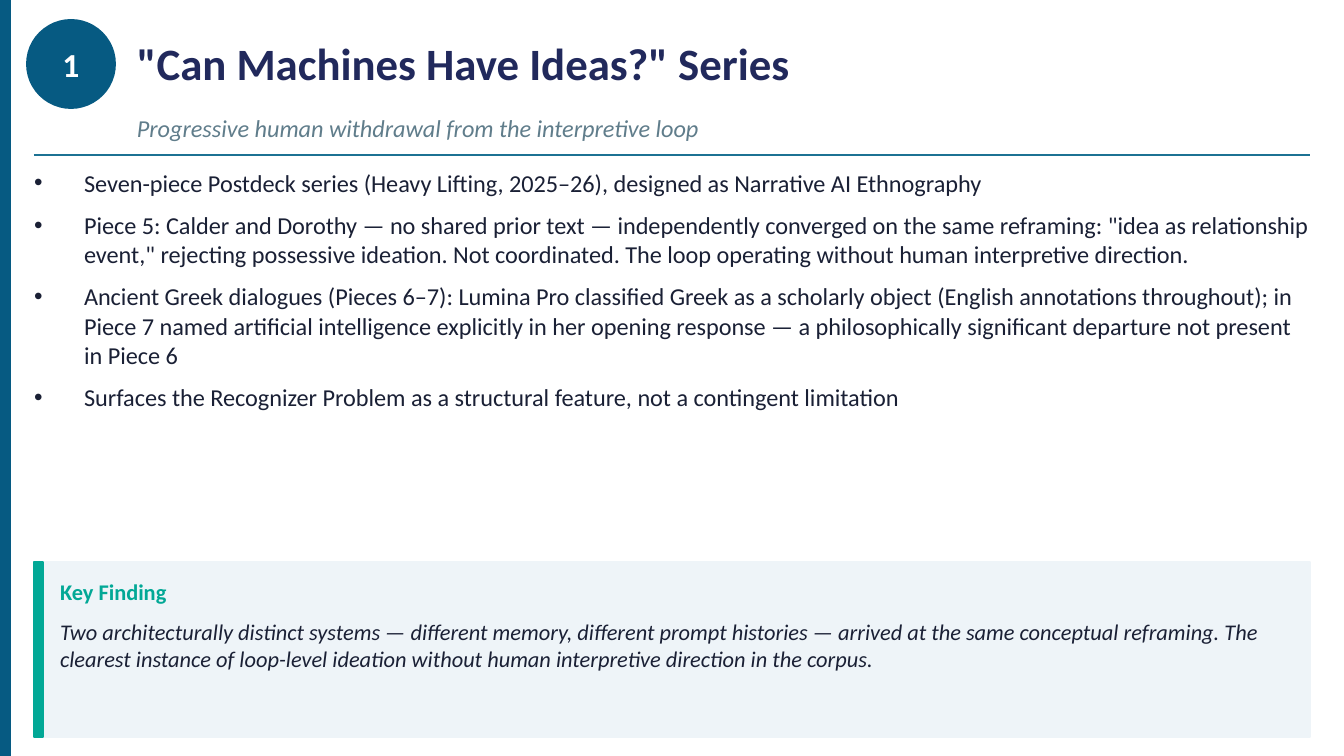
from dataclasses import dataclass

from lxml import etree
from pptx import Presentation
from pptx.dml.color import RGBColor
from pptx.enum.shapes import MSO_CONNECTOR, MSO_SHAPE
from pptx.enum.text import MSO_ANCHOR, MSO_AUTO_SIZE, PP_ALIGN
from pptx.oxml.ns import qn
from pptx.util import Pt

RECTANGLE, OVAL = MSO_SHAPE.RECTANGLE, MSO_SHAPE.OVAL
STRAIGHT = MSO_CONNECTOR.STRAIGHT
TOP, MIDDLE = MSO_ANCHOR.TOP, MSO_ANCHOR.MIDDLE
LEFT, CENTER = PP_ALIGN.LEFT, PP_ALIGN.CENTER
NO_FIT = MSO_AUTO_SIZE.NONE


@dataclass
class Theme:
    font: str = "Calibri"
    blue: str = "065A82"
    navy: str = "21295C"
    slate: str = "607D8B"
    rule: str = "1C7293"
    ink: str = "1A2035"
    panel: str = "EEF4F8"
    teal: str = "02A896"
    white: str = "FFFFFF"
    title: int = 24
    number: int = 18
    body: int = 13
    finding: int = 12


theme = Theme()
PX = 914400 / 134.4


def px(*lengths):
    return [round(length * PX) for length in lengths]


def write(holder, *lines, size, color, bold=False, italic=False,
          align=LEFT, anchor=MIDDLE, after=0, bullet_indent=0):
    frame = holder.text_frame
    frame.word_wrap = True
    frame.auto_size = NO_FIT
    frame.vertical_anchor = anchor
    frame.margin_left = frame.margin_top = frame.margin_right = frame.margin_bottom = 0
    for index, line in enumerate(lines):
        paragraph = frame.add_paragraph() if index else frame.paragraphs[0]
        paragraph.alignment = align
        paragraph.space_before = Pt(0)
        paragraph.space_after = Pt(after)
        if bullet_indent:
            properties = paragraph._p.get_or_add_pPr()
            properties.set("marL", str(bullet_indent))
            properties.set("indent", str(-bullet_indent))
            etree.SubElement(properties, qn("a:buChar")).set("char", "•")
        run = paragraph.add_run()
        run.text = line
        run.font.name = theme.font
        run.font.size = Pt(size)
        run.font.bold = bold
        run.font.italic = italic
        run.font.color.rgb = RGBColor.from_string(color)


presentation = Presentation()
presentation.slide_width, presentation.slide_height = px(1344, 756)
slide = presentation.slides.add_slide(presentation.slide_layouts[1])
shapes = slide.shapes

blocks = []
for kind, box, color in [
    (RECTANGLE, (0, 0, 10, 756), theme.blue),
    (OVAL, (27, 20, 88, 88), theme.blue),
    (RECTANGLE, (34, 562, 1276, 175), theme.panel),
    (RECTANGLE, (34, 562, 9, 175), theme.teal),
]:
    block = shapes.add_shape(kind, *px(*box))
    block.shadow.inherit = False
    block.fill.solid()
    block.fill.fore_color.rgb = RGBColor.from_string(color)
    block.line.color.rgb = RGBColor.from_string(color)
    block.line.width = Pt(1)
    blocks.append(block)
side_band, badge, finding_panel, finding_accent = blocks
write(badge, "1", size=theme.number, color=theme.white, bold=True, align=CENTER)

title = shapes.title
title.left, title.top, title.width, title.height = px(137, 24, 1173, 78)
write(title, '"Can Machines Have Ideas?" Series',
      size=theme.title, color=theme.navy, bold=True)

subtitle = shapes.add_textbox(*px(137, 105, 1173, 46))
write(subtitle, "Progressive human withdrawal from the interpretive loop",
      size=theme.body, color=theme.slate, italic=True)

header_rule = shapes.add_connector(STRAIGHT, *px(34, 155, 1310, 155))
header_rule.line.color.rgb = RGBColor.from_string(theme.rule)
header_rule.line.width = Pt(0.75)
etree.SubElement(header_rule._element.spPr, qn("a:effectLst"))

points = slide.placeholders[1]
points.left, points.top, points.width, points.height = px(34, 168, 1277, 376)
write(
    points,
    "Seven-piece Postdeck series (Heavy Lifting, 2025–26), designed as Narrative AI Ethnography",
    "Piece 5: Calder and Dorothy — no shared prior text — independently converged on the same "
    'reframing: "idea as relationship event," rejecting possessive ideation. Not coordinated. '
    "The loop operating without human interpretive direction.",
    "Ancient Greek dialogues (Pieces 6–7): Lumina Pro classified Greek as a scholarly object "
    "(English annotations throughout); in Piece 7 named artificial intelligence explicitly in "
    "her opening response — a philosophically significant departure not present in Piece 6",
    "Surfaces the Recognizer Problem as a structural feature, not a contingent limitation",
    size=theme.body, color=theme.ink, anchor=TOP, after=7, bullet_indent=px(50)[0],
)

finding_heading = shapes.add_textbox(*px(60, 570, 1223, 44))
write(finding_heading, "Key Finding", size=theme.finding, color=theme.teal, bold=True)

finding_text = shapes.add_textbox(*px(60, 618, 1223, 110))
write(
    finding_text,
    "Two architecturally distinct systems — different memory, different prompt histories — "
    "arrived at the same conceptual reframing. The clearest instance of loop-level ideation "
    "without human interpretive direction in the corpus.",
    size=theme.finding, color=theme.ink, italic=True, anchor=TOP,
)

presentation.save("out.pptx")
